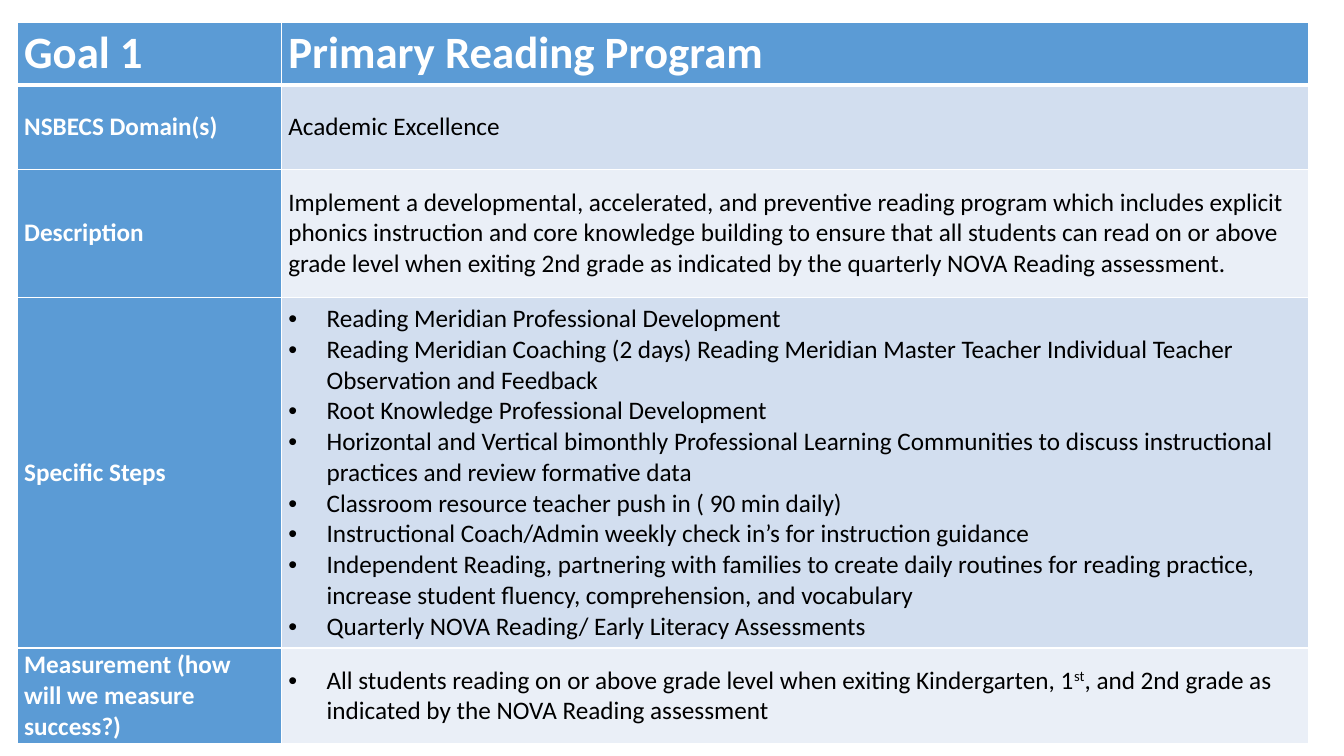
from lxml.etree import SubElement
from pptx import Presentation
from pptx.dml.color import RGBColor
from pptx.enum.text import MSO_ANCHOR
from pptx.oxml.ns import qn
from pptx.util import Inches, Pt

COLORS = {
    "label": "5B9BD5",
    "band_dark": "D2DEEF",
    "band_light": "EAEFF7",
    "white": "FFFFFF",
    "black": "000000",
}
COLUMN_WIDTHS = [2.62, 10.19]
ROW_HEIGHTS = [0.62, 0.84, 1.27, 3.48, 0.95]

# Each row: label, bulleted or not, paragraphs.
# A paragraph is a list of runs; a run is (text, superscript).
GOAL_ROWS = [
    ("Goal 1", False, [[("Primary Reading Program", False)]]),
    ("NSBECS Domain(s)", False, [[("Academic Excellence", False)]]),
    ("Description", False, [[(
        "Implement a developmental, accelerated, and preventive reading program which "
        "includes explicit phonics instruction and core knowledge building to ensure that "
        "all students can read on or above grade level when exiting 2nd grade as indicated "
        "by the quarterly NOVA Reading assessment.", False)]]),
    ("Specific Steps", True, [[(step, False)] for step in (
        "Reading Meridian Professional Development",
        "Reading Meridian Coaching (2 days) Reading Meridian Master Teacher Individual "
        "Teacher Observation and Feedback",
        "Root Knowledge Professional Development",
        "Horizontal and Vertical bimonthly Professional Learning Communities to discuss "
        "instructional practices and review formative data",
        "Classroom resource teacher push in ( 90 min daily)",
        "Instructional Coach/Admin weekly check in’s for instruction guidance",
        "Independent Reading, partnering with families to create daily routines for reading "
        "practice, increase student fluency, comprehension, and vocabulary",
        "Quarterly NOVA Reading/ Early Literacy Assessments",
    )]),
    ("Measurement (how will we measure success?)", True, [[
        ("All students reading on or above grade level when exiting Kindergarten, 1", False),
        ("st", True),
        (", and 2nd grade as indicated by the NOVA Reading assessment", False),
    ]]),
]


class GoalSlide:
    def __init__(self, slide, font="Calibri"):
        self.slide = slide
        self.font = font

    def color(self, name):
        return RGBColor.from_string(COLORS[name])

    def table(self, left, top, widths, heights):
        frame = self.slide.shapes.add_table(
            len(heights), len(widths), Inches(left), Inches(top),
            Inches(sum(widths)), Inches(sum(heights)))
        grid = frame.table
        grid.horz_banding = False
        for column, width in zip(grid.columns, widths):
            column.width = Inches(width)
        for row, height in zip(grid.rows, heights):
            row.height = Inches(height)
        return grid

    def borders(self, cell, top, bottom):
        """Draw white borders, 1 pt at the sides and as given above and below."""
        properties = cell._tc.get_or_add_tcPr()
        for side, points in (("L", 1), ("R", 1), ("T", top), ("B", bottom)):
            line = SubElement(properties, qn(f"a:ln{side}"), w=str(Pt(points)))
            fill = SubElement(line, qn("a:solidFill"))
            SubElement(fill, qn("a:srgbClr"), val=COLORS["white"])

    def bullet(self, paragraph):
        properties = paragraph._p.get_or_add_pPr()
        properties.set("marL", str(Inches(0.38)))
        properties.set("indent", str(-Inches(0.38)))
        SubElement(properties, qn("a:buFont"), typeface="Arial")
        SubElement(properties, qn("a:buChar"), char="•")

    def run(self, paragraph, text, size, color, bold, superscript):
        run = paragraph.add_run()
        run.text = text
        run.font.name = self.font
        run.font.size = Pt(size)
        run.font.bold = bold
        run.font.color.rgb = self.color(color)
        if superscript:
            run.font._element.set("baseline", "30000")

    def cell(self, cell, paragraphs, fill, size, color, bold, bulleted=False):
        cell.fill.solid()
        cell.fill.fore_color.rgb = self.color(fill)
        cell.vertical_anchor = MSO_ANCHOR.MIDDLE
        cell.margin_left = Inches(0.07)
        cell.margin_right = Inches(0.08)
        cell.margin_top = cell.margin_bottom = 0
        for index, runs in enumerate(paragraphs):
            frame = cell.text_frame
            paragraph = frame.add_paragraph() if index else frame.paragraphs[0]
            if bulleted:
                self.bullet(paragraph)
            else:
                paragraph.space_after = Pt(10)
            for text, superscript in runs:
                self.run(paragraph, text, size, color, bold, superscript)


def main():
    presentation = Presentation()
    presentation.slide_width = Inches(13.33)
    presentation.slide_height = Inches(7.5)
    page = GoalSlide(presentation.slides.add_slide(presentation.slide_layouts[6]))

    goal_table = page.table(0.17, 0.22, COLUMN_WIDTHS, ROW_HEIGHTS)
    for index, (label, bulleted, details) in enumerate(GOAL_ROWS):
        header = index == 0
        size = 32 if header else 18
        band = "band_dark" if index % 2 else "band_light"
        label_cell, detail_cell = goal_table.rows[index].cells
        for cell in (label_cell, detail_cell):
            page.borders(cell, top=3 if index == 1 else 1, bottom=3 if header else 1)
        page.cell(label_cell, [[(label, False)]], "label", size, "white", True)
        page.cell(detail_cell, details, "label" if header else band, size,
                  "white" if header else "black", header, bulleted)

    presentation.save("out.pptx")


if __name__ == "__main__":
    main()
